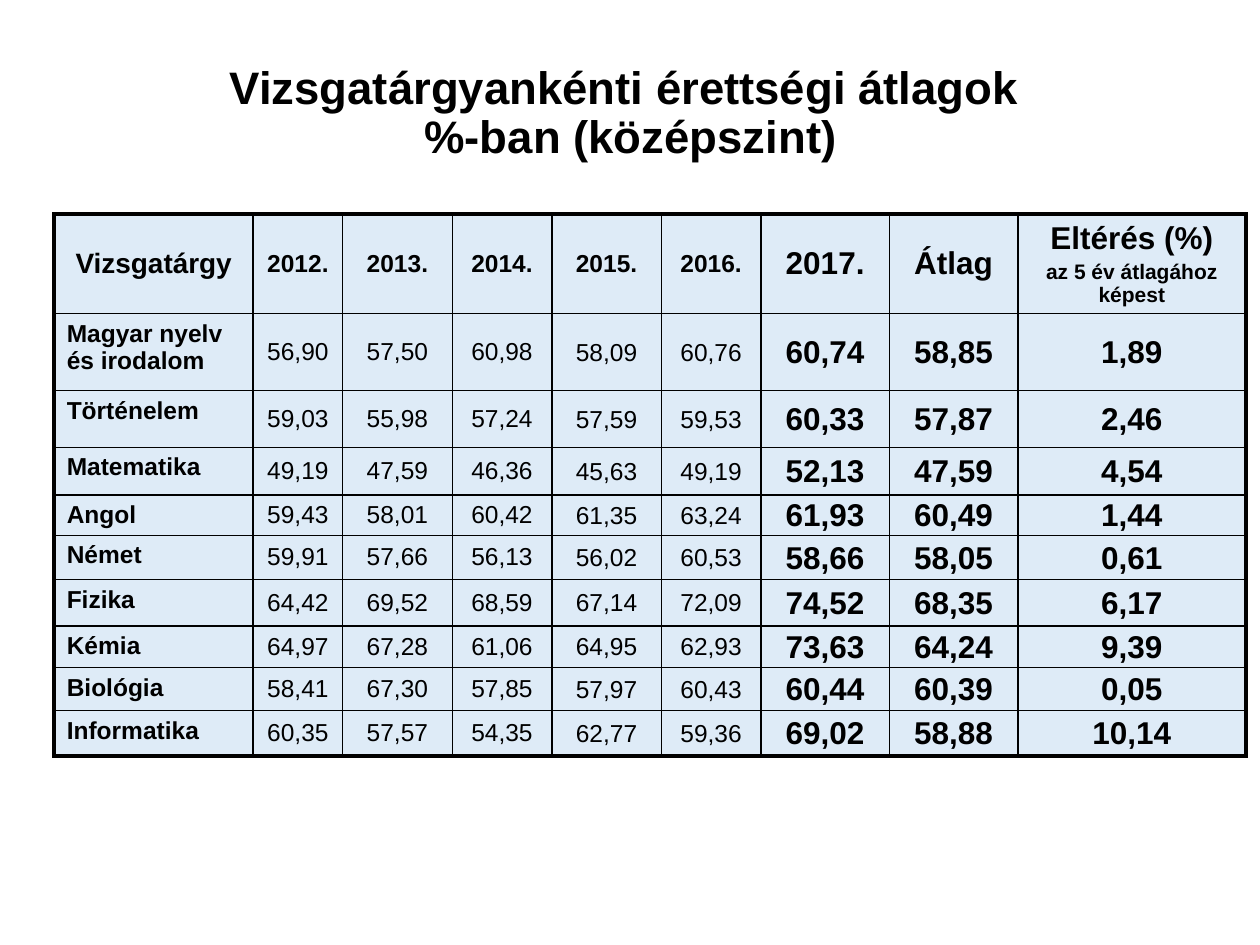
from typing import NamedTuple

from lxml.etree import SubElement
from pptx import Presentation
from pptx.dml.color import RGBColor
from pptx.enum.text import MSO_ANCHOR, PP_ALIGN
from pptx.oxml.ns import qn
from pptx.util import Inches, Pt

FONT, BLACK, PALE_BLUE = "Arial", "000000", "DEEBF7"
THIN, THICK = 1, 2.25


class CellStyle(NamedTuple):
    size: int
    bold: bool
    align: PP_ALIGN = PP_ALIGN.CENTER
    anchor: MSO_ANCHOR = MSO_ANCHOR.MIDDLE
    tight: bool = False


SUBJECT = CellStyle(14, True, PP_ALIGN.LEFT, MSO_ANCHOR.TOP)
EARLY_YEAR = CellStyle(14, False)
LATE_YEAR = CellStyle(14, False, tight=True)
RESULT = CellStyle(18, True, tight=True)
BODY_STYLES = [SUBJECT] + [EARLY_YEAR] * 3 + [LATE_YEAR] * 2 + [RESULT] * 3
HEADER_SIZES = [16] + [14] * 5 + [18] * 3

COL_WIDTHS = [1.58, 0.71, 0.87, 0.79, 0.87, 0.79, 1.02, 1.02, 1.81]
ROW_HEIGHTS = [0.79, 0.61, 0.45, 0.38, 0.32, 0.35, 0.37, 0.33, 0.34, 0.36]
HEADER = ["Vizsgatárgy", "2012.", "2013.", "2014.", "2015.", "2016.", "2017.",
          "Átlag", "Eltérés (%)"]
HEADER_NOTE = "az 5 év átlagához képest"
RESULTS = [
    ("Magyar nyelv és irodalom", "56,90 57,50 60,98 58,09 60,76 60,74 58,85 1,89"),
    ("Történelem", "59,03 55,98 57,24 57,59 59,53 60,33 57,87 2,46"),
    ("Matematika", "49,19 47,59 46,36 45,63 49,19 52,13 47,59 4,54"),
    ("Angol", "59,43 58,01 60,42 61,35 63,24 61,93 60,49 1,44"),
    ("Német", "59,91 57,66 56,13 56,02 60,53 58,66 58,05 0,61"),
    ("Fizika", "64,42 69,52 68,59 67,14 72,09 74,52 68,35 6,17"),
    ("Kémia", "64,97 67,28 61,06 64,95 62,93 73,63 64,24 9,39"),
    ("Biológia", "58,41 67,30 57,85 57,97 60,43 60,44 60,39 0,05"),
    ("Informatika", "60,35 57,57 54,35 62,77 59,36 69,02 58,88 10,14"),
]


def rgb(color: str) -> RGBColor:
    return RGBColor.from_string(color)


def format_paragraph(p, size: int, bold: bool, align: PP_ALIGN) -> None:
    p.alignment = align
    p.font.name, p.font.size, p.font.bold = FONT, Pt(size), bold
    p.font.color.rgb = rgb(BLACK)


def set_borders(cell, widths: dict[str, float]) -> None:
    """Put the lines ahead of the fill, as the schema asks."""
    tc_pr = cell._tc.get_or_add_tcPr()
    for i, (side, width) in enumerate(widths.items()):
        ln = SubElement(tc_pr, qn(f"a:ln{side}"), w=str(Pt(width)))
        fill = SubElement(ln, qn("a:solidFill"))
        SubElement(fill, qn("a:srgbClr"), val=BLACK)
        tc_pr.insert(i, ln)


def fill_cell(cell, text: str, style: CellStyle) -> None:
    cell.fill.solid()
    cell.fill.fore_color.rgb = rgb(PALE_BLUE)
    cell.vertical_anchor = style.anchor
    if style.tight:
        cell.margin_left = cell.margin_right = cell.margin_top = Inches(0.01)
        cell.margin_bottom = 0
    p = cell.text_frame.paragraphs[0]
    p.text = text
    format_paragraph(p, style.size, style.bold, style.align)


def add_title(s) -> None:
    title = s.shapes.title
    title.left, title.top = Inches(0.27), Inches(0.44)
    title.width, title.height = Inches(9.37), Inches(0.94)
    tf = title.text_frame
    tf.vertical_anchor = MSO_ANCHOR.MIDDLE
    p = tf.paragraphs[0]
    p.text = "Vizsgatárgyankénti érettségi átlagok\v %-ban (középszint)"
    p.line_spacing = 0.9
    format_paragraph(p, 26, True, PP_ALIGN.CENTER)


def add_results_table(s) -> None:
    n_rows, n_cols = len(ROW_HEIGHTS), len(COL_WIDTHS)
    table = s.shapes.add_table(n_rows, n_cols, Inches(0.43), Inches(1.7),
                               Inches(sum(COL_WIDTHS)),
                               Inches(sum(ROW_HEIGHTS))).table
    table.horz_banding = False
    for column, width in zip(table.columns, COL_WIDTHS):
        column.width = Inches(width)
    for row, height in zip(table.rows, ROW_HEIGHTS):
        row.height = Inches(height)

    # Header and body share one grid
    rows = [HEADER] + [[name, *values.split()] for name, values in RESULTS]
    header_styles = [CellStyle(size, True) for size in HEADER_SIZES]
    for r, texts in enumerate(rows):
        styles = BODY_STYLES if r else header_styles
        for c, (text, style) in enumerate(zip(texts, styles)):
            cell = table.cell(r, c)
            fill_cell(cell, text, style)
            set_borders(cell, {
                "L": THICK if c == 0 else THIN,
                "R": THICK if c == n_cols - 1 else THIN,
                "T": THICK if r == 0 else THIN,
                "B": THICK if r == n_rows - 1 else THIN,
            })

    # Small note under the last heading
    p = table.cell(0, n_cols - 1).text_frame.add_paragraph()
    p.text = HEADER_NOTE
    p.space_before = Pt(2.4)
    format_paragraph(p, 12, True, PP_ALIGN.CENTER)


def main() -> None:
    prs = Presentation()
    prs.slide_width, prs.slide_height = Inches(10), Inches(7.5)
    s = prs.slides.add_slide(prs.slide_layouts[5])
    add_title(s)
    add_results_table(s)
    prs.save("out.pptx")


if __name__ == "__main__":
    main()
